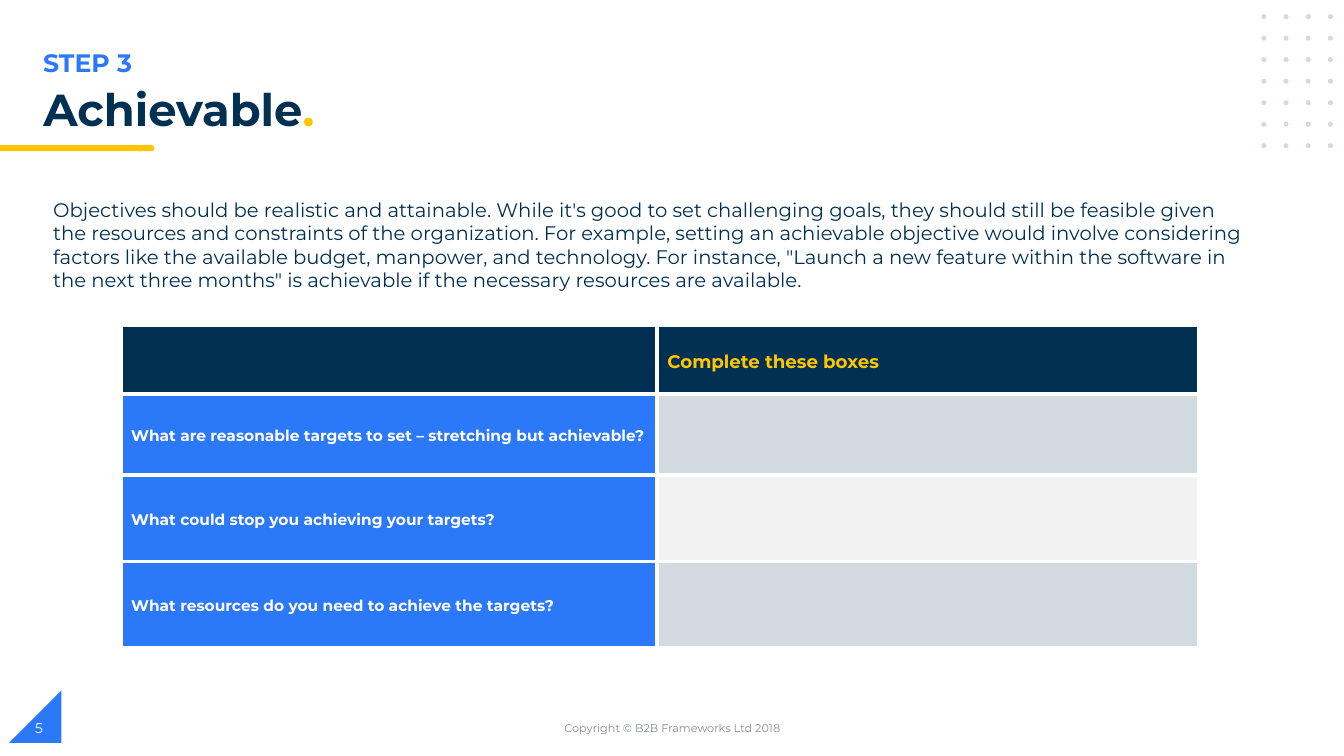
from dataclasses import dataclass
from itertools import product

from lxml import etree
from pptx import Presentation
from pptx.dml.color import RGBColor
from pptx.enum.shapes import MSO_SHAPE
from pptx.enum.text import MSO_ANCHOR, MSO_AUTO_SIZE, PP_ALIGN
from pptx.oxml.ns import qn
from pptx.util import Inches, Pt

TOP, MIDDLE = MSO_ANCHOR.TOP, MSO_ANCHOR.MIDDLE
LEFT, CENTER = PP_ALIGN.LEFT, PP_ALIGN.CENTER
NO_AUTOFIT = MSO_AUTO_SIZE.NONE
RECTANGLE, ELLIPSE = MSO_SHAPE.RECTANGLE, MSO_SHAPE.OVAL
TERMINATOR = MSO_SHAPE.FLOWCHART_TERMINATOR
TRIANGLE = MSO_SHAPE.RIGHT_TRIANGLE
TITLE_ONLY = 5


@dataclass(frozen=True)
class Theme:
    font: str = "Montserrat"
    navy: str = "023053"
    blue: str = "2B79F8"
    yellow: str = "FFC600"
    mist: str = "D1DBE0"
    pale: str = "F2F2F2"
    gray: str = "888C97"
    white: str = "FFFFFF"
    title_size: int = 32
    step_size: int = 18
    body_size: int = 14
    header_size: int = 13
    question_size: int = 11
    number_size: int = 10
    footer_size: int = 8


@dataclass(frozen=True)
class Box:
    left: float
    top: float
    width: float
    height: float

    def emu(self) -> tuple:
        return tuple(Inches(v) for v in (self.left, self.top, self.width, self.height))


@dataclass(frozen=True)
class Label:
    text: str
    box: Box
    size: int
    color: str
    bold: bool = False
    anchor: MSO_ANCHOR = TOP
    align: PP_ALIGN = LEFT


@dataclass(frozen=True)
class Ornament:
    kind: MSO_SHAPE
    box: Box
    color: str


@dataclass(frozen=True)
class TableRow:
    height: float
    texts: tuple
    fills: tuple
    size: int
    color: str


THEME = Theme()

# Corner triangle, title underline and dot grid
ORNAMENTS = [
    Ornament(TERMINATOR, Box(1.34, 1.44, 0.19, 0.06), THEME.yellow),
    Ornament(RECTANGLE, Box(0, 1.44, 1.41, 0.06), THEME.yellow),
] + [
    Ornament(ELLIPSE, Box(12.51 + 0.22 * column, 0.14 + 0.2135 * row, 0.05, 0.05), THEME.mist)
    for row, column in product(range(7), range(4))
]
CORNER = Ornament(TRIANGLE, Box(0.09, 6.85, 0.52, 0.52), THEME.blue)

TITLE_BOX = Box(0.33, 0.82, 11.59, 0.56)
INTRODUCTION = (
    "Objectives should be realistic and attainable. While it's good to set challenging goals, "
    "they should still be feasible given the resources and constraints of the organization. "
    "For example, setting an achievable objective would involve considering factors like the "
    "available budget, manpower, and technology. For instance, \"Launch a new feature within "
    "the software in the next three months\" is achievable if the necessary resources are available."
)
LABELS = [
    Label("STEP 3", Box(0.33, 0.42, 6.69, 0.4), THEME.step_size, THEME.blue, bold=True),
    Label(INTRODUCTION, Box(0.43, 1.91, 12.07, 1.04), THEME.body_size, THEME.navy),
    Label("Copyright © B2B Frameworks Ltd 2018", Box(4.42, 7.02, 4.5, 0.4),
          THEME.footer_size, THEME.gray, anchor=MIDDLE, align=CENTER),
    Label("5", Box(0.25, 7.02, 3, 0.4), THEME.number_size, THEME.white, anchor=MIDDLE),
]

COLUMN_WIDTHS = (5.32, 5.37)
QUESTIONS = [
    (0.8, "What are reasonable targets to set – stretching but achievable?", THEME.mist),
    (0.86, "What could stop you achieving your targets?", THEME.pale),
    (0.86, "What resources do you need to achieve the targets?", THEME.mist),
]
TABLE_ROWS = [
    TableRow(0.68, ("", "Complete these boxes"), (THEME.navy, THEME.navy),
             THEME.header_size, THEME.yellow)
] + [
    TableRow(height, (question, ""), (THEME.blue, answer_fill), THEME.question_size, THEME.white)
    for height, question, answer_fill in QUESTIONS
]


def format_font(font, size: int, color: str, bold: bool) -> None:
    for name, value in {"name": THEME.font, "size": Pt(size), "bold": bold}.items():
        setattr(font, name, value)
    font.color.rgb = RGBColor.from_string(color)


def format_frame(frame, anchor: MSO_ANCHOR) -> None:
    values = {
        "word_wrap": True, "auto_size": NO_AUTOFIT, "vertical_anchor": anchor,
        "margin_left": Inches(0.1), "margin_right": Inches(0.1),
        "margin_top": Inches(0.05), "margin_bottom": Inches(0.05),
    }
    for name, value in values.items():
        setattr(frame, name, value)


def draw_ornament(slide, ornament: Ornament):
    shape = slide.shapes.add_shape(ornament.kind, *ornament.box.emu())
    shape.shadow.inherit = False
    shape.fill.solid()
    shape.fill.fore_color.rgb = RGBColor.from_string(ornament.color)
    shape.line.fill.background()
    return shape


def draw_label(slide, label: Label) -> None:
    frame = slide.shapes.add_textbox(*label.box.emu()).text_frame
    format_frame(frame, label.anchor)
    paragraph = frame.paragraphs[0]
    paragraph.text = label.text
    paragraph.alignment = label.align
    format_font(paragraph.runs[0].font, label.size, label.color, label.bold)


def draw_title(slide) -> None:
    title = slide.shapes.title
    title.left, title.top, title.width, title.height = TITLE_BOX.emu()
    format_frame(title.text_frame, TOP)
    paragraph = title.text_frame.paragraphs[0]
    paragraph.alignment = LEFT
    paragraph.line_spacing = 0.9
    for text, color in (("Achievable", THEME.navy), (".", THEME.yellow)):
        run = paragraph.add_run()
        run.text = text
        format_font(run.font, THEME.title_size, color, True)


def add_borders(cell) -> None:
    properties = cell._tc.get_or_add_tcPr()
    for position, side in enumerate(("a:lnL", "a:lnR", "a:lnT", "a:lnB")):
        line = etree.Element(qn(side), w=str(Pt(3)))
        fill = etree.SubElement(line, qn("a:solidFill"))
        etree.SubElement(fill, qn("a:srgbClr"), val=THEME.white)
        properties.insert(position, line)


def draw_table(slide) -> None:
    box = Box(1.2, 3.23, sum(COLUMN_WIDTHS), sum(row.height for row in TABLE_ROWS))
    table = slide.shapes.add_table(len(TABLE_ROWS), len(COLUMN_WIDTHS), *box.emu()).table
    for column, width in zip(table.columns, COLUMN_WIDTHS):
        column.width = Inches(width)
    for table_row, row in zip(table.rows, TABLE_ROWS):
        table_row.height = Inches(row.height)
        for cell, text, fill in zip(table_row.cells, row.texts, row.fills):
            cell.fill.solid()
            cell.fill.fore_color.rgb = RGBColor.from_string(fill)
            cell.vertical_anchor = MIDDLE
            cell.margin_top = cell.margin_bottom = 0
            add_borders(cell)
            if text:
                paragraph = cell.text_frame.paragraphs[0]
                paragraph.text = text
                paragraph.line_spacing = 1.15
                format_font(paragraph.runs[0].font, row.size, row.color, True)


def main() -> None:
    presentation = Presentation()
    presentation.slide_width, presentation.slide_height = Inches(13.33), Inches(7.5)
    slide = presentation.slides.add_slide(presentation.slide_layouts[TITLE_ONLY])

    # Decoration
    corner = draw_ornament(slide, CORNER)
    corner._element.spPr.get_or_add_xfrm().set("flipH", "1")
    for ornament in ORNAMENTS:
        draw_ornament(slide, ornament)

    # Content
    draw_title(slide)
    for label in LABELS:
        draw_label(slide, label)
    draw_table(slide)
    presentation.save("out.pptx")


if __name__ == "__main__":
    main()
